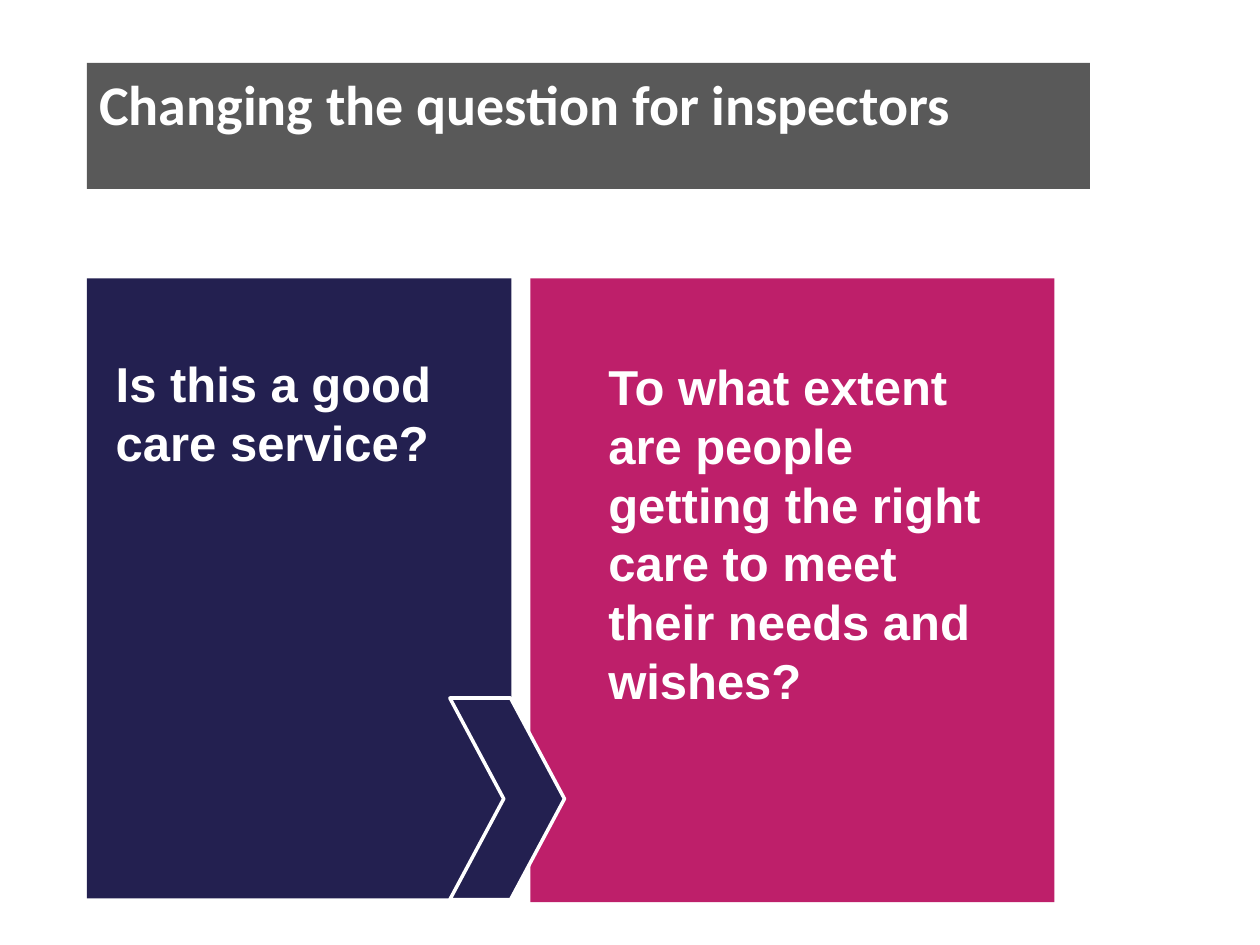
from dataclasses import dataclass
from pptx import Presentation
from pptx.dml.color import RGBColor
from pptx.enum.shapes import MSO_SHAPE
from pptx.enum.text import MSO_ANCHOR, PP_ALIGN
from pptx.util import Inches, Pt

RECT = MSO_SHAPE.RECTANGLE
CHEVRON = MSO_SHAPE.CHEVRON
TOP = MSO_ANCHOR.TOP
LEFT = PP_ALIGN.LEFT

COLS, ROWS = 100, 75
WIDTH, HEIGHT = Inches(10), Inches(7.5)
NAVY, PINK, GREY, WHITE = "232050", "BE1F6A", "595959", "FFFFFF"
EDGE, CARD_TOP = 6.9, 22.1


@dataclass
class Area:
    col: float
    row: float
    cols: float
    rows: float

    def place(self) -> tuple[int, int, int, int]:
        wide, high = WIDTH / COLS, HEIGHT / ROWS
        return (round(self.col * wide), round(self.row * high),
                round(self.cols * wide), round(self.rows * high))


@dataclass
class Card:
    area: Area
    fill: str
    label: Area
    text: str


CARDS = [
    Card(Area(EDGE, CARD_TOP, 33.7, 49.2), NAVY,
         Area(8.2, 27.6, 27.2, 10.4), "Is this a good care service?"),
    Card(Area(42.1, CARD_TOP, 41.6, 49.5), PINK,
         Area(47.3, 27.8, 34.3, 29.3),
         "To what extent are people getting the right care "
         "to meet their needs and wishes?"),
]


def color(code: str) -> RGBColor:
    return RGBColor.from_string(code)


def add_form(slide, kind, area: Area, fill: str):
    form = slide.shapes.add_shape(kind, *area.place())
    form.shadow.inherit = False
    form.fill.solid()
    form.fill.fore_color.rgb = color(fill)
    form.line.fill.background()
    return form


def set_text(shape, text: str, font: str, size: int) -> None:
    frame = shape.text_frame
    frame.text = text
    frame.word_wrap = True
    frame.vertical_anchor = TOP
    for para in frame.paragraphs:
        para.alignment = LEFT
        for run in para.runs:
            run.font.name = font
            run.font.size = Pt(size)
            run.font.bold = True
            run.font.color.rgb = color(WHITE)


def main() -> None:
    deck = Presentation()
    deck.slide_width, deck.slide_height = WIDTH, HEIGHT
    slide = deck.slides.add_slide(deck.slide_layouts[6])

    for card in CARDS:
        add_form(slide, RECT, card.area, card.fill)
    for card in CARDS:
        label = slide.shapes.add_textbox(*card.label.place())
        set_text(label, card.text, "Arial", 28)

    arrow = add_form(slide, CHEVRON, Area(35.7, 55.4, 9.1, 16), NAVY)
    arrow.adjustments[0] = 0.47
    arrow.line.color.rgb = color(WHITE)
    arrow.line.width = Pt(2)

    title = add_form(slide, RECT, Area(EDGE, 5, 79.6, 10), GREY)
    set_text(title, "Changing the question for inspectors", "Calibri", 32)

    deck.save("out.pptx")


if __name__ == "__main__":
    main()
